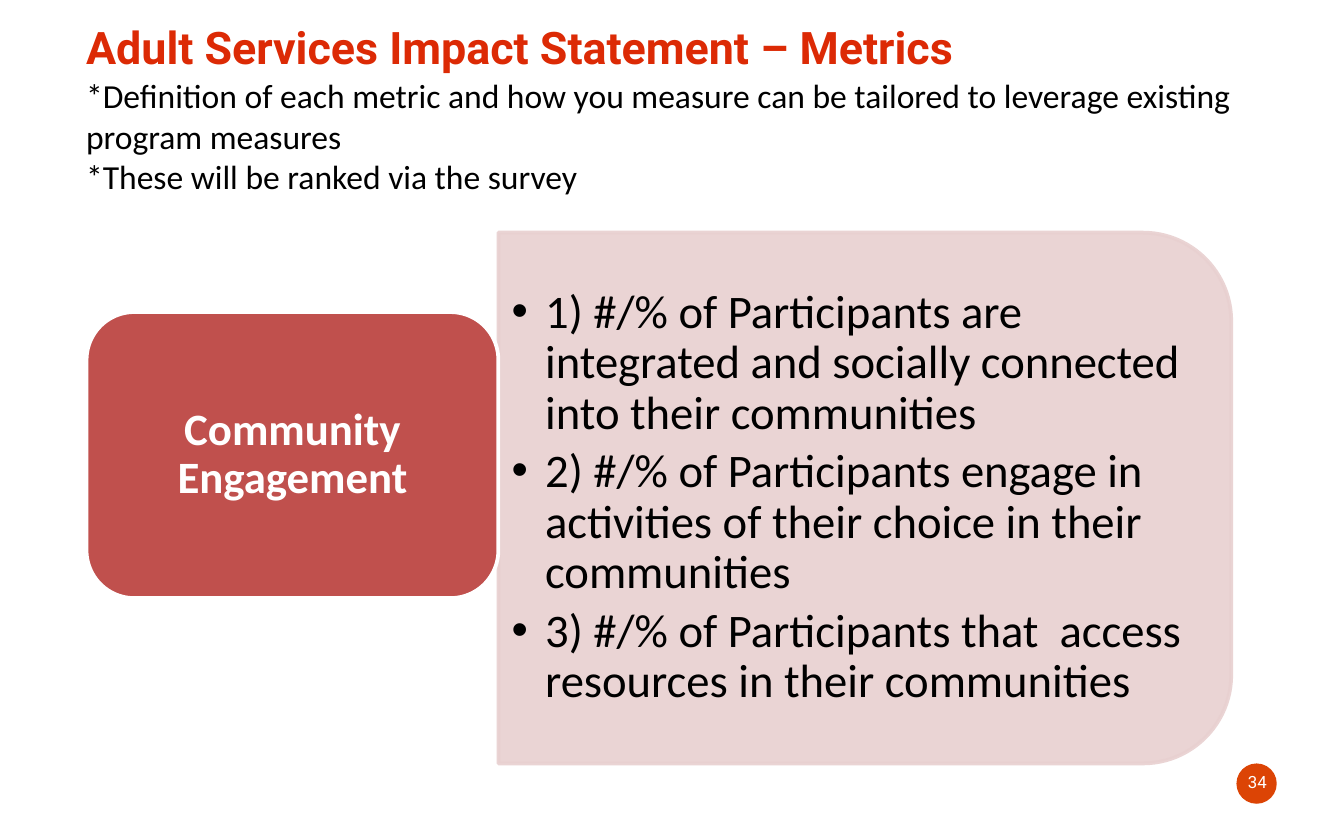
from pptx import Presentation
from pptx.dml.color import RGBColor
from pptx.enum.shapes import MSO_SHAPE
from pptx.enum.text import MSO_ANCHOR, PP_ALIGN
from pptx.oxml.ns import qn
from pptx.util import Pt
from lxml.etree import SubElement

COLORS = {
    "title": "DC2A05", "text": "000000", "white": "FFFFFF",
    "badge": "DC4405", "card": "C0504D", "panel": "E8D0D0",
}
TITLE = "Adult Services Impact Statement – Metrics"
NOTES = [
    "*Definition of each metric and how you measure can be tailored to leverage existing program measures",
    "*These will be ranked via the survey",
]
CATEGORY = "Community Engagement"
METRICS = [
    "1) #/% of Participants are integrated and socially connected into their communities",
    "2) #/% of Participants engage in activities of their choice in their communities",
    "3) #/% of Participants that  access resources in their communities",
]
PAGE = "34"


def rgb(name):
    return RGBColor.from_string(COLORS[name])


def add_shape(s, kind, box, fill, line=None, alpha=None, rotation=0):
    sp = s.shapes.add_shape(kind, *map(Pt, box))
    sp.shadow.inherit = False
    sp.rotation = rotation
    sp.fill.solid()
    sp.fill.fore_color.rgb = rgb(fill)
    if line:
        sp.line.color.rgb = rgb(line)
        sp.line.width = Pt(2)
    else:
        sp.line.fill.background()
    if alpha:
        for clr in sp.element.spPr.iter(qn("a:srgbClr")):
            SubElement(clr, qn("a:alpha"), val=str(alpha * 1000))


def add_text(s, paragraphs, box, size, font="Calibri", color="text", bold=False,
             align=PP_ALIGN.LEFT, anchor=MSO_ANCHOR.TOP, spacing=None, after=0, bullet=False):
    tf = s.shapes.add_textbox(*map(Pt, box)).text_frame
    tf.word_wrap = True
    tf.vertical_anchor = anchor
    for i, text in enumerate(paragraphs):
        p = tf.add_paragraph() if i else tf.paragraphs[0]
        p.alignment = align
        p.line_spacing = spacing
        p.space_after = Pt(after)
        if bullet:
            pPr = p._p.get_or_add_pPr()
            pPr.set("marL", str(Pt(18)))
            pPr.set("indent", str(-Pt(18)))
            SubElement(pPr, qn("a:buFont"), typeface="Arial")
            SubElement(pPr, qn("a:buChar"), char="•")
        r = p.add_run()
        r.text = text
        r.font.name = font
        r.font.size = Pt(size)
        r.font.bold = bold
        r.font.color.rgb = rgb(color)


def main():
    """Build the adult services metrics slide."""
    prs = Presentation()
    prs.slide_width, prs.slide_height = Pt(720), Pt(450)
    s = prs.slides.add_slide(prs.slide_layouts[6])

    add_shape(s, MSO_SHAPE.OVAL, (662.4, 409, 21.6, 21.6), "badge")
    add_text(s, [PAGE], (652.3, 406.8, 42.5, 23.8), 9, font="Roboto", color="white",
             align=PP_ALIGN.CENTER, anchor=MSO_ANCHOR.MIDDLE)

    left, top, width, height = 267, 124.6, 392.6, 284.4
    turned = (left + (width - height) / 2, top + (height - width) / 2, height, width)
    add_shape(s, MSO_SHAPE.ROUND_2_SAME_RECTANGLE, turned, "panel", line="panel",
              alpha=90, rotation=90)
    add_text(s, METRICS, (left, 138.4, 378.7, 256.6), 25, anchor=MSO_ANCHOR.MIDDLE,
             spacing=0.9, after=4.4, bullet=True)

    x, y, w, h = 46.4, 167.2, 220.6, 153.2
    inset = 7.5
    add_shape(s, MSO_SHAPE.ROUNDED_RECTANGLE, (x, y, w, h), "card", line="white")
    add_text(s, [CATEGORY], (x + inset, y + inset, w - 2 * inset, h - 2 * inset), 24,
             color="white", bold=True, align=PP_ALIGN.CENTER, anchor=MSO_ANCHOR.MIDDLE,
             spacing=0.9)

    add_text(s, [TITLE], (39, 7.2, 600, 36), 24, font="Roboto", color="title", bold=True)
    add_text(s, NOTES, (39, 36.7, 649.4, 94.3), 18)
    prs.save("out.pptx")


if __name__ == "__main__":
    main()
